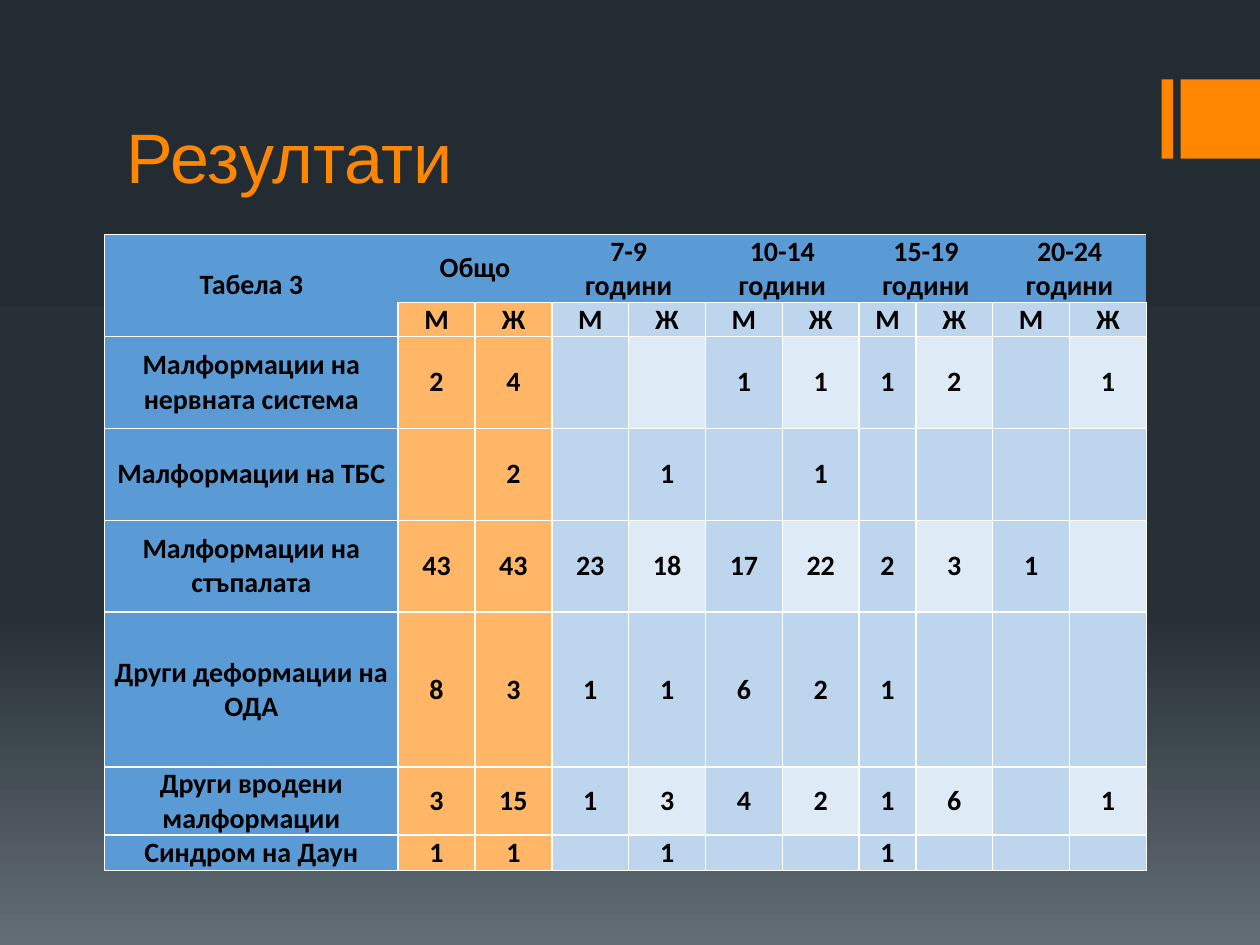
import copy
import pptx
import pptx.util
import pptx.dml.color
import pptx.enum.shapes
import pptx.enum.text
import pptx.oxml
import pptx.oxml.ns
import lxml.etree

inch = pptx.util.Inches
hues = {
    "top": "242C33", "mid": "273037", "low": "636D76",
    "accent": "FF8600", "head": "5B9BD5", "total": "FFB666",
    "blue": "BDD6EE", "pale": "DEEAF6", "line": "FFFFFF", "ink": "000000",
}


def tint(name):
    return pptx.dml.color.RGBColor.from_string(hues[name])


def edge(cell, side, shown):
    props = cell._tc.get_or_add_tcPr()
    line = lxml.etree.SubElement(props, pptx.oxml.ns.qn("a:ln" + side), w="12700")
    if shown:
        fill = lxml.etree.SubElement(line, pptx.oxml.ns.qn("a:solidFill"))
        lxml.etree.SubElement(fill, pptx.oxml.ns.qn("a:srgbClr"), val=hues["line"])
    else:
        lxml.etree.SubElement(line, pptx.oxml.ns.qn("a:noFill"))


deck = pptx.Presentation()
deck.slide_width, deck.slide_height = inch(10), inch(7.5)
slide = deck.slides.add_slide(deck.slide_layouts[6])

back = slide.background.fill
back.gradient()
back.gradient_angle = 270
stops = slide.element.find(".//" + pptx.oxml.ns.qn("a:gsLst"))
stops.append(copy.deepcopy(stops[-1]))
for stop, (name, place) in zip(back.gradient_stops, [("top", 0), ("mid", 0.65), ("low", 1)]):
    stop.color.rgb = tint(name)
    stop.position = place

for left, width in [(9.22, 0.09), (9.37, 0.63)]:
    bar = slide.shapes.add_shape(
        pptx.enum.shapes.MSO_SHAPE.RECTANGLE, inch(left), inch(0.63), inch(width), inch(0.63))
    bar.shadow.inherit = False
    bar.fill.solid()
    bar.fill.fore_color.rgb = tint("accent")
    bar.line.fill.background()

title = slide.shapes.add_textbox(inch(0.91), inch(0.6), inch(8), inch(1.02)).text_frame
title.word_wrap = True
title.vertical_anchor = pptx.enum.text.MSO_ANCHOR.BOTTOM
title.text = "Резултати"
font = title.paragraphs[0].font
font.name, font.size = "Arial", pptx.util.Pt(40)
font.color.rgb = tint("accent")

groups = ["Общо", "7-9 години", "10-14 години", "15-19 години", "20-24 години"]
data = [
    ["Табела 3"] + [text for group in groups for text in (group, "")],
    [""] + ["М", "Ж"] * len(groups),
    ["Малформации на нервната система", 2, 4, "", "", 1, 1, 1, 2, "", 1],
    ["Малформации на ТБС", "", 2, "", 1, "", 1, "", "", "", ""],
    ["Малформации на стъпалата", 43, 43, 23, 18, 17, 22, 2, 3, 1, ""],
    ["Други деформации на ОДА", 8, 3, 1, 1, 6, 2, 1, "", "", ""],
    ["Други вродени малформации", 3, 15, 1, 3, 4, 2, 1, 6, "", 1],
    ["Синдром на Даун", 1, 1, "", 1, "", "", 1, "", "", ""],
]
wide = [2.33] + [0.61] * 6 + [0.45] + [0.61] * 3
high = [0.54, 0.27] + [0.73] * 3 + [1.23, 0.54, 0.28]
table = slide.shapes.add_table(
    len(high), len(wide), inch(0.83), inch(1.86), inch(sum(wide)), inch(sum(high))).table
table.first_row = table.horz_banding = False
for col, width in zip(table.columns, wide):
    col.width = inch(width)
for row, height in zip(table.rows, high):
    row.height = inch(height)

table.cell(0, 0).merge(table.cell(1, 0))
for c in range(1, len(wide), 2):
    table.cell(0, c).merge(table.cell(0, c + 1))

for r, row in enumerate(data):
    for c, value in enumerate(row):
        cell = table.cell(r, c)
        for side in "LRTB":
            edge(cell, side, r > 0 or side in "TB" or (c == 0 and side == "L"))
        if r == 0 or c == 0:
            name = "head"
        elif c < 3:
            name = "total"
        else:
            name = "pale" if r in (2, 4, 6) and c % 2 == 0 else "blue"
        cell.fill.solid()
        cell.fill.fore_color.rgb = tint(name)
        cell.margin_left = cell.margin_right = inch(0.14 if r == 0 else 0.06)
        cell.margin_top = cell.margin_bottom = 0
        cell.vertical_anchor = pptx.enum.text.MSO_ANCHOR.MIDDLE
        para = cell.text_frame.paragraphs[0]
        para.alignment = pptx.enum.text.PP_ALIGN.CENTER
        font = para.font
        font.name, font.size, font.bold = "Calibri", pptx.util.Pt(16), True
        font.color.rgb = tint("ink")
        if value == "":
            lxml.etree.SubElement(para._p, pptx.oxml.ns.qn("a:endParaRPr"), sz="1600")
        else:
            para.add_run().text = str(value)

deck.save("out.pptx")
